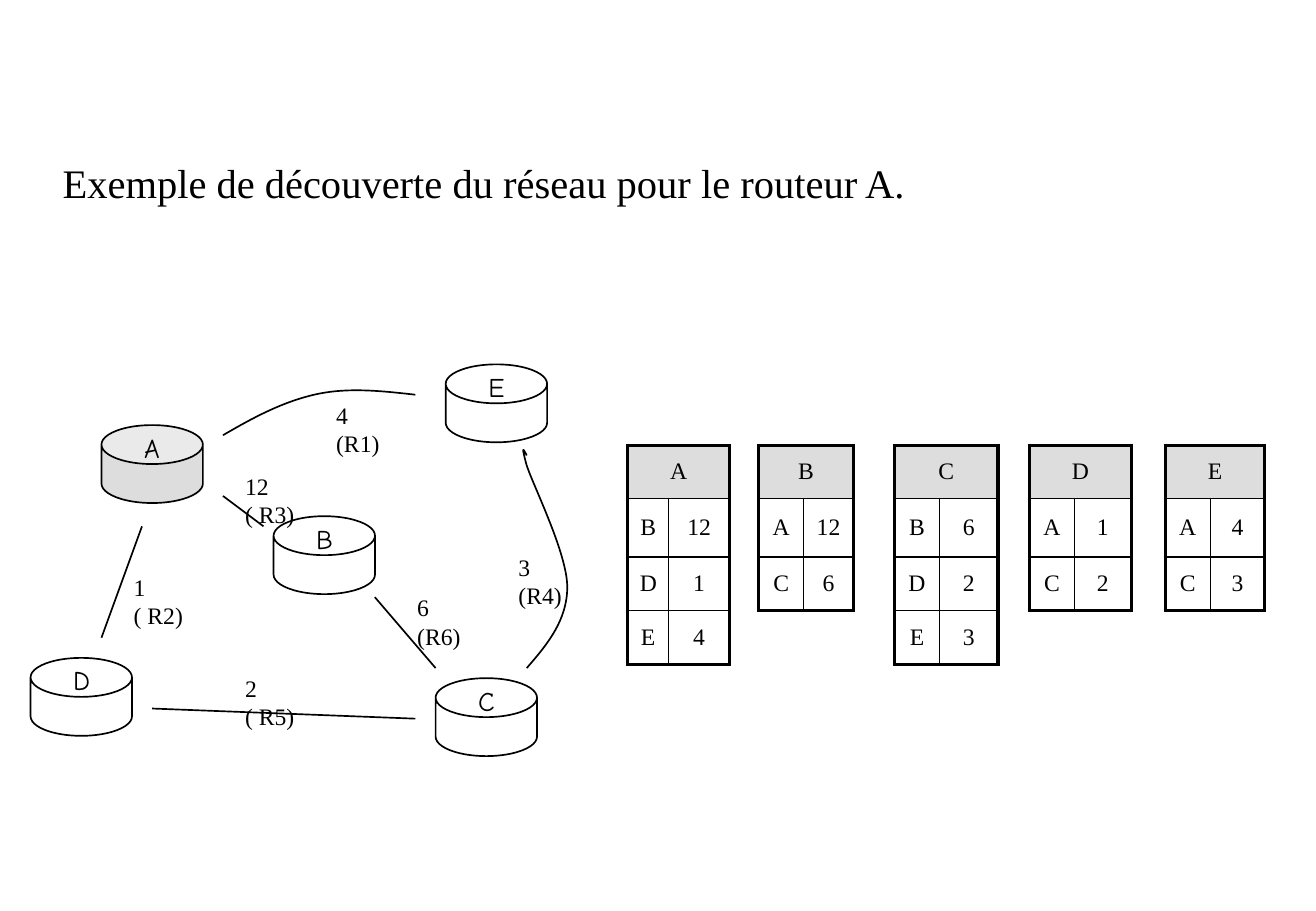
from lxml import etree
from pptx import Presentation
from pptx import util as u
from pptx.dml.color import RGBColor
from pptx.enum import shapes, text
from pptx.oxml import ns

BLACK = RGBColor(0x00, 0x00, 0x00)
GREY = RGBColor(0xDD, 0xDD, 0xDD)
SERIF = "Times New Roman"
COMIC = "Comic Neue"
NO_STYLE = "{2D5ABB26-0587-4C30-8999-92F81FD0307C}"
THIN, THICK = 1, 2.25
GRID = 2.54 / 12

ROUTERS = {"A": (7, 6), "B": (24, 15), "C": (40, 31), "D": (0, 29), "E": (41, 0)}
CURVES = [
    [(19, 7), (22, 5.25), (24.8, 3.75), (28, 3), (31.2, 2.25), (34.5, 2.6), (38, 3)],
    [(49, 9), (48.7, 8.4), (48.4, 7.8), (49, 10), (49.7, 12.1), (53, 18.7), (53, 22),
     (53, 25.3), (51, 27.7), (49, 30)],
]
LINKS = [
    ((19, 13), (23, 16)),
    ((11, 16), (7, 27)),
    ((12, 34), (38, 35)),
    ((34, 23), (40, 30)),
]
COSTS = [
    ("4 (R1)", 29, 3),
    ("1 ( R2)", 9, 20),
    ("2 ( R5)", 20, 30),
    ("6 (R6)", 37, 22),
    ("12 ( R3)", 20, 10),
    ("3 (R4)", 47, 18),
]
NEIGHBOURS = {
    "A": [("B", "12"), ("D", "1"), ("E", "4")],
    "B": [("A", "12"), ("C", "6")],
    "C": [("B", "6"), ("D", "2"), ("E", "3")],
    "D": [("A", "1"), ("C", "2")],
    "E": [("A", "4"), ("C", "3")],
}
COLUMNS = [0.86, 1.27, 0.61, 0.94, 1.04, 0.86, 0.94, 1.22, 0.66, 0.94, 1.19, 0.71, 0.94, 1.14]
ROWS = [1.12, 1.22, 1.12, 1.12]


def write(frame, content, size=14, font=SERIF, align=text.PP_ALIGN.LEFT):
    para = frame.paragraphs[0]
    para.alignment = align
    span = para.add_run()
    span.text = content
    span.font.size = u.Pt(size)
    span.font.name = font
    span.font.color.rgb = BLACK


def add_text(page, content, left, top, width, height, wrap=False, **style):
    box = page.shapes.add_textbox(left, top, width, height)
    box.text_frame.word_wrap = wrap
    write(box.text_frame, content, **style)


def outline(shape):
    shape.line.color.rgb = BLACK
    shape.line.width = u.Pt(THIN)


def add_router(page, name, left, top):
    can = page.shapes.add_shape(shapes.MSO_SHAPE.CAN, left, top, u.Cm(2.12), u.Cm(1.63))
    can.adjustments[0] = 0.5
    can.shadow.inherit = False
    outline(can)
    if name == "A":
        can.fill.solid()
        can.fill.fore_color.rgb = GREY
    else:
        can.fill.background()
    add_text(page, name, left + u.Cm(0.64), top, u.Cm(0.88), u.Cm(0.94), size=16, font=COMIC)


def add_curve(page, points):
    builder = page.shapes.build_freeform(*points[0])
    builder.add_line_segments(points[1:], close=False)
    curve = builder.convert_to_shape()
    curve.shadow.inherit = False
    curve.fill.background()
    outline(curve)
    steps = iter(curve._element.xpath(".//a:lnTo"))
    for segment in zip(steps, steps, steps):
        bezier = etree.Element(ns.qn("a:cubicBezTo"))
        segment[0].addprevious(bezier)
        for step in segment:
            bezier.append(step[0])
            step.getparent().remove(step)


def add_link(page, start, end):
    link = page.shapes.add_connector(shapes.MSO_CONNECTOR.STRAIGHT, *start, *end)
    outline(link)
    etree.SubElement(link._element.spPr, ns.qn("a:effectLst"))


def add_network(page, left, top):
    def place(x, y):
        return left + u.Cm(x * GRID), top + u.Cm(y * GRID)

    for name, spot in ROUTERS.items():
        add_router(page, name, *place(*spot))
    for points in CURVES:
        add_curve(page, [place(*point) for point in points])
    for start, end in LINKS:
        add_link(page, place(*start), place(*end))
    for label, x, y in COSTS:
        add_text(page, label, *place(x, y), u.Cm(1.73), u.Cm(1.35), wrap=True)


def set_borders(cell, *widths):
    props = cell._tc.get_or_add_tcPr()
    for index, (side, width) in enumerate(zip("LRTB", widths)):
        line = etree.Element(ns.qn(f"a:ln{side}"), w=str(u.Pt(width)))
        fill = etree.SubElement(line, ns.qn("a:solidFill"))
        etree.SubElement(fill, ns.qn("a:srgbClr"), val=str(BLACK))
        props.insert(index, line)


def fill_cell(cell, content):
    cell.vertical_anchor = text.MSO_ANCHOR.MIDDLE
    write(cell.text_frame, content, align=text.PP_ALIGN.CENTER)


def add_neighbour_tables(page, left, top):
    frame = page.shapes.add_table(len(ROWS), len(COLUMNS), left, top,
                                  u.Cm(sum(COLUMNS)), u.Cm(sum(ROWS)))
    frame._element.xpath(".//a:tableStyleId")[0].text = NO_STYLE
    table = frame.table
    table.first_row = table.horz_banding = False
    for column, width in zip(table.columns, COLUMNS):
        column.width = u.Cm(width)
    for row, height in zip(table.rows, ROWS):
        row.height = u.Cm(height)
    for cell in table.iter_cells():
        cell.fill.background()
        cell.text_frame.paragraphs[0].font.size = u.Pt(14)

    for index, (router, entries) in enumerate(NEIGHBOURS.items()):
        first = 3 * index
        header = table.cell(0, first)
        header.merge(table.cell(0, first + 1))
        header.fill.solid()
        header.fill.fore_color.rgb = GREY
        fill_cell(header, router)
        for column in (first, first + 1):
            set_borders(table.cell(0, column), THICK, THICK, THICK, THIN)
        for row, (neighbour, cost) in enumerate(entries, 1):
            bottom = THICK if row == len(entries) else THIN
            name_cell, cost_cell = table.cell(row, first), table.cell(row, first + 1)
            fill_cell(name_cell, neighbour)
            fill_cell(cost_cell, cost)
            set_borders(name_cell, THICK, THIN, THIN, bottom)
            set_borders(cost_cell, THIN, THICK, THIN, bottom)


def main():
    deck = Presentation()
    deck.slide_width, deck.slide_height = u.Cm(27.51), u.Cm(19.05)
    page = deck.slides.add_slide(deck.slide_layouts[6])
    add_network(page, u.Cm(0.64), u.Cm(7.62))
    add_neighbour_tables(page, u.Cm(13.12), u.Cm(9.31))
    add_text(page, "Exemple de découverte du réseau pour le routeur A.",
             u.Cm(1.06), u.Cm(3.18), u.Cm(18.29), u.Cm(2.82), size=24)
    deck.save("out.pptx")


if __name__ == "__main__":
    main()
